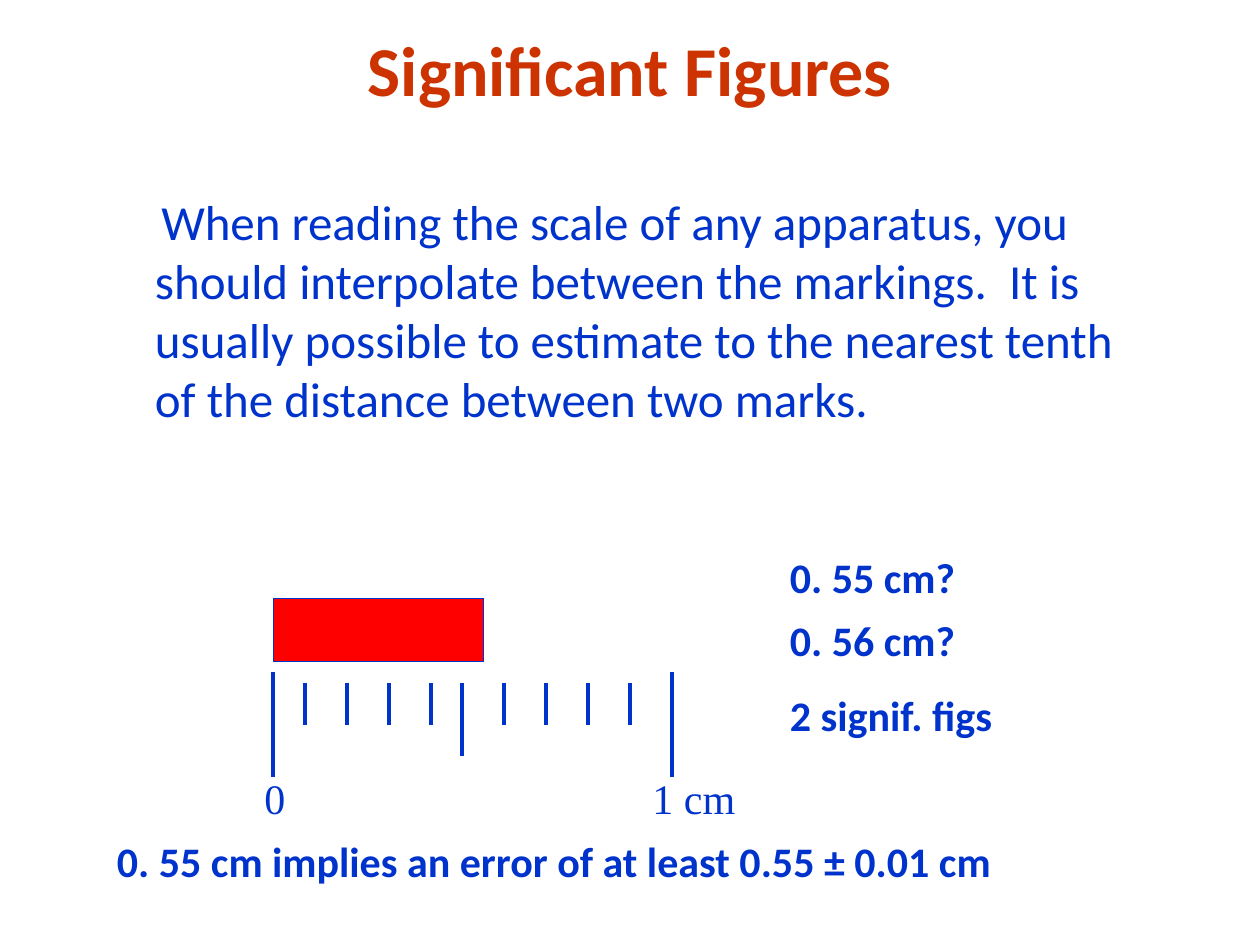
from lxml.etree import SubElement
from pptx import Presentation
from pptx.dml.color import RGBColor
from pptx.enum.shapes import MSO_CONNECTOR, MSO_SHAPE
from pptx.enum.text import MSO_ANCHOR, MSO_AUTO_SIZE, PP_ALIGN
from pptx.oxml.ns import qn
from pptx.util import Inches, Pt

BLUE = RGBColor(0x00, 0x33, 0xCC)
ORANGE = RGBColor(0xCC, 0x33, 0x00)
RED = RGBColor(0xFF, 0x00, 0x00)

TITLE = "Significant Figures"
BODY = ("When reading the scale of any apparatus, you should interpolate between "
        "the markings.  It is usually possible to estimate to the nearest tenth "
        "of the distance between two marks.")

TITLE_FORMAT = {"name": "Calibri", "size": Pt(40), "bold": True}
BODY_FORMAT = {"name": "Calibri", "size": Pt(28), "bold": False}
NOTE_FORMAT = {"name": "Calibri", "size": Pt(24), "bold": True}
SCALE_FORMAT = {"name": "Times New Roman", "size": Pt(24), "bold": False}

# Text, left, top, width
NOTES = [
    ("0. 55 cm?", 6.17, 4.33, 2.25),
    ("0. 56 cm?", 6.17, 4.83, 2.25),
    ("2 signif. figs", 6.17, 5.42, 2.25),
    ("0. 55 cm implies an error of at least 0.55 ± 0.01 cm", 0.83, 6.58, 7.92),
]
SCALE_LABELS = [("0", 2, 6.08, 0.37), ("1 cm", 5.08, 6.08, 0.86)]

SCALE_START, SCALE_MIDDLE, SCALE_END = 2.17, 3.67, 5.33
TICK_GAP = 1 / 3
SMALL_TICKS = [start + step * TICK_GAP for start in (2.42, 4) for step in range(4)]
# Positions, top, bottom
TICKS = [
    ([SCALE_START, SCALE_END], 5.33, 6.17),
    ([SCALE_MIDDLE], 5.42, 6),
    (SMALL_TICKS, 5.42, 5.75),
]


def place(shape, left, top, width, height):
    shape.left, shape.top = Inches(left), Inches(top)
    shape.width, shape.height = Inches(width), Inches(height)


def write(shape, text, font_format, color=BLUE):
    paragraph = shape.text_frame.paragraphs[0]
    run = paragraph.add_run()
    run.text = text
    for name, value in font_format.items():
        setattr(run.font, name, value)
    run.font.color.rgb = color
    return paragraph


def add_label(slide, text, left, top, width, font_format, wrap):
    box = slide.shapes.add_textbox(Inches(left), Inches(top), Inches(width), Inches(0.5))
    box.text_frame.word_wrap = wrap
    box.text_frame.auto_size = MSO_AUTO_SIZE.SHAPE_TO_FIT_TEXT
    write(box, text, font_format)


def add_tick(slide, x, top, bottom):
    tick = slide.shapes.add_connector(
        MSO_CONNECTOR.STRAIGHT, Inches(x), Inches(top), Inches(x), Inches(bottom))
    tick.line.color.rgb = BLUE
    tick.line.width = Pt(2.25)
    SubElement(tick._element.spPr, qn("a:effectLst"))


def add_heading_and_body(slide):
    title, body = slide.placeholders
    place(title, 0.75, 0.17, 8.5, 0.75)
    place(body, 0.75, 1.47, 8.5, 3.86)
    for shape, anchor in ((title, MSO_ANCHOR.MIDDLE), (body, MSO_ANCHOR.TOP)):
        shape.text_frame.vertical_anchor = anchor
        shape.text_frame.auto_size = MSO_AUTO_SIZE.NONE
    write(title, TITLE, TITLE_FORMAT, ORANGE).alignment = PP_ALIGN.CENTER
    paragraph = write(body, BODY, BODY_FORMAT)
    paragraph.space_before = Pt(0)
    properties = paragraph._p.get_or_add_pPr()
    properties.set("marL", str(Inches(0.38)))
    properties.set("indent", str(Inches(0.05)))
    SubElement(properties, qn("a:buNone"))


def add_measured_bar(slide):
    bar = slide.shapes.add_shape(
        MSO_SHAPE.RECTANGLE, Inches(SCALE_START), Inches(4.75), Inches(1.67), Inches(0.5))
    bar.shadow.inherit = False
    bar.fill.solid()
    bar.fill.fore_color.rgb = RED
    bar.line.color.rgb = BLUE
    bar.line.width = Pt(0.75)


def main():
    presentation = Presentation()
    presentation.slide_width, presentation.slide_height = Inches(10), Inches(7.5)
    slide = presentation.slides.add_slide(presentation.slide_layouts[1])
    add_heading_and_body(slide)
    add_measured_bar(slide)
    for positions, top, bottom in TICKS:
        for x in positions:
            add_tick(slide, x, top, bottom)
    for label in SCALE_LABELS:
        add_label(slide, *label, SCALE_FORMAT, wrap=False)
    for note in NOTES:
        add_label(slide, *note, NOTE_FORMAT, wrap=True)
    presentation.save("out.pptx")


if __name__ == "__main__":
    main()
